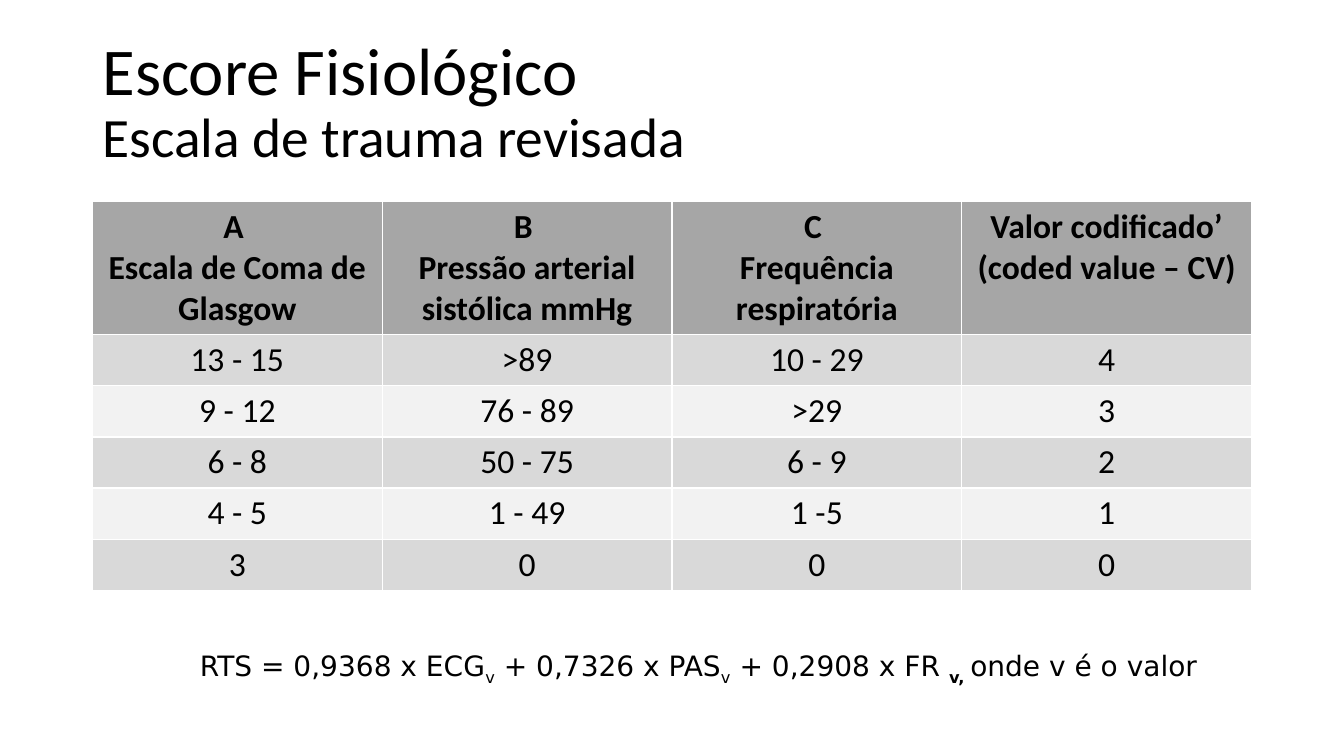
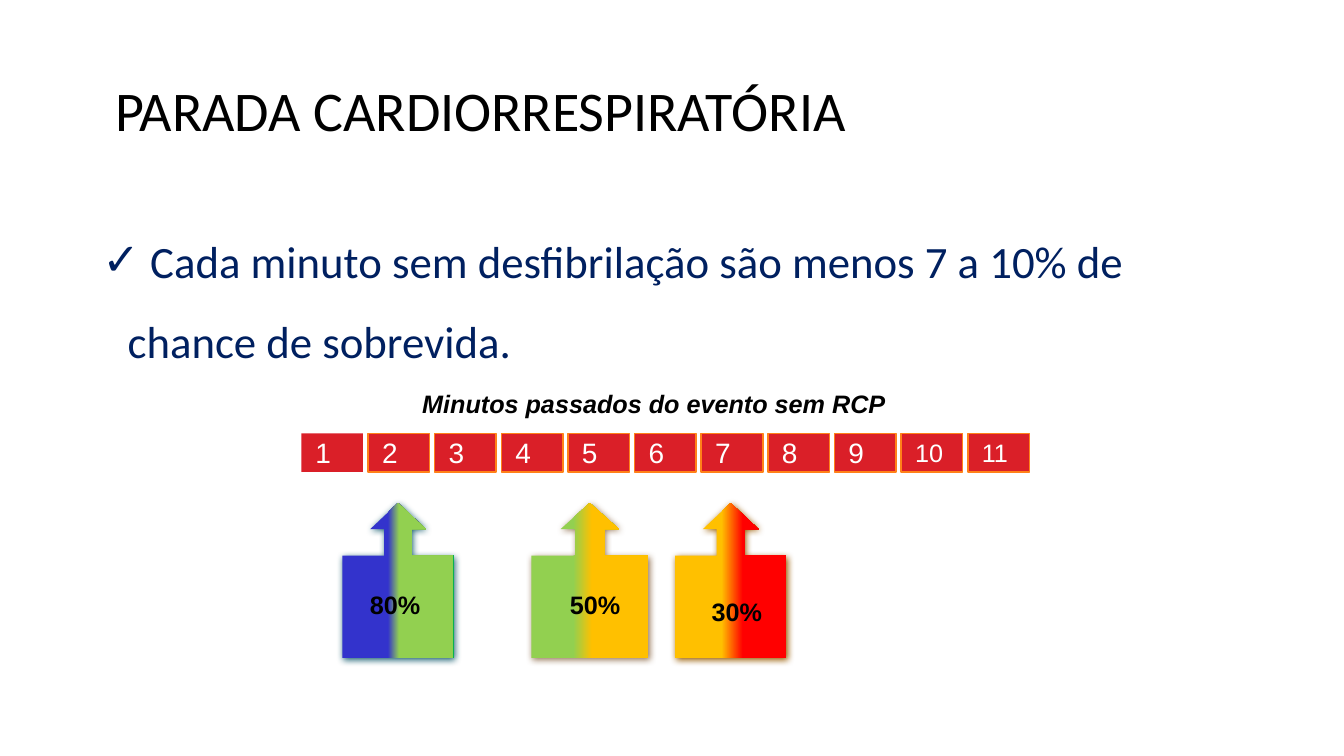
from lxml import etree
from pptx import Presentation
from pptx.dml.color import RGBColor
from pptx.enum.shapes import MSO_SHAPE
from pptx.enum.text import MSO_ANCHOR, MSO_AUTO_SIZE, PP_ALIGN
from pptx.oxml.ns import qn
from pptx.util import Pt

LEFT, CENTER = PP_ALIGN.LEFT, PP_ALIGN.CENTER
MIDDLE, TOP = MSO_ANCHOR.MIDDLE, MSO_ANCHOR.TOP
NO_FIT = MSO_AUTO_SIZE.NONE
RECT, CALLOUT = MSO_SHAPE.RECTANGLE, MSO_SHAPE.UP_ARROW_CALLOUT
TITLE_ONLY, TITLE_AND_CONTENT = 5, 1

BLACK, WHITE, NAVY = "000000", "FFFFFF", "002060"
HEADER, ODD, EVEN = "A6A6A6", "D9D9D9", "F2F2F2"
RED, ORANGE = "DA1F28", "FF8119"
CONTENT_X, CONTENT_Y, CONTENT_W = 66, 144, 828

rgb = RGBColor.from_string


def write(p, text, size, color=BLACK, font="Calibri", bold=False, italic=False, sub=False):
    r = p.add_run()
    r.text = text
    f = r.font
    f.size, f.name, f.bold, f.italic = Pt(size), font, bold, italic
    f.color.rgb = rgb(color)
    if sub:
        r._r.get_or_add_rPr().set("baseline", "-25000")


def add_text_box(s, x, y, w, h, inset=(10, 6), align=LEFT, anchor=TOP):
    """Add an empty text box and return its first paragraph."""
    tf = s.shapes.add_textbox(Pt(x), Pt(y), Pt(w), Pt(h)).text_frame
    tf.word_wrap = True
    tf.vertical_anchor = anchor
    tf.margin_left = tf.margin_right = Pt(inset[0])
    tf.margin_top = tf.margin_bottom = Pt(inset[1])
    p = tf.paragraphs[0]
    p.alignment = align
    return p


prs = Presentation()
prs.slide_width, prs.slide_height = Pt(960), Pt(540)

# Slides and titles: layout, (text, size) lines, top and bottom inset
titles = [
    (TITLE_ONLY, [("Escore Fisiológico", 47.7), ("Escala de trauma revisada", 39.6)], 0, 14),
    (TITLE_AND_CONTENT, [(" PARADA CARDIORRESPIRATÓRIA", 40)], 3.6, 3.6),
]
for layout, lines, inset_top, inset_bottom in titles:
    s = prs.slides.add_slide(prs.slide_layouts[layout])
    title = s.shapes.title
    title.left, title.top, title.width, title.height = Pt(CONTENT_X), Pt(29), Pt(CONTENT_W), Pt(104)
    tf = title.text_frame
    tf.auto_size, tf.vertical_anchor = NO_FIT, MIDDLE
    tf.margin_top, tf.margin_bottom = Pt(inset_top), Pt(inset_bottom)
    p = tf.paragraphs[0]
    p.alignment, p.line_spacing = LEFT, 0.9
    for i, (text, size) in enumerate(lines):
        if i:
            p.add_line_break()
        write(p, text, size)
score_slide, arrest_slide = prs.slides

# Revised trauma score table
rows = [
    ["A \nEscala de Coma de Glasgow", "B \nPressão arterial sistólica mmHg",
     "C \nFrequência respiratória", "Valor codificado’\n(coded value – CV)"],
    ["13 - 15", ">89", "10 - 29", "4"],
    ["9 - 12", "76 - 89", ">29", "3"],
    ["6 - 8", "50 - 75", "6 - 9", "2"],
    ["4 - 5", "1 - 49", "1 -5", "1"],
    ["3", "0", "0", "0"],
]
table = score_slide.shapes.add_table(len(rows), len(rows[0]), Pt(CONTENT_X), Pt(CONTENT_Y),
                                     Pt(CONTENT_W), Pt(276.5)).table
for i, row in enumerate(rows):
    table.rows[i].height = Pt(36.4 if i else 94.5)
    for j, text in enumerate(row):
        cell = table.cell(i, j)
        cell.fill.solid()
        cell.fill.fore_color.rgb = rgb(HEADER if i == 0 else ODD if i % 2 else EVEN)
        tf = cell.text_frame
        for k, line in enumerate(text.split("\n")):
            p = tf.add_paragraph() if k else tf.paragraphs[0]
            p.alignment = CENTER
            write(p, line, 24, bold=i == 0)

# Score formula
p = add_text_box(score_slide, 85, 459.4, CONTENT_W, 31.6, inset=(7.2, 3.6), align=CENTER)
formula = [("RTS = 0,9368 x ECG", {}), ("v", {"sub": True}), (" + 0,7326 x PAS", {}),
           ("v", {"sub": True}), (" + 0,2908 x FR ", {}), ("v, ", {"sub": True, "bold": True}),
           ("onde v é o valor", {})]
for text, fmt in formula:
    write(p, text, 20, font="DejaVu Sans", **fmt)

# Survival statement
s = arrest_slide
body = s.placeholders[1]
body.left, body.top, body.width, body.height = Pt(CONTENT_X), Pt(CONTENT_Y), Pt(CONTENT_W), Pt(343)
tf = body.text_frame
tf.auto_size = NO_FIT
p = tf.paragraphs[0]
pPr = p._p.get_or_add_pPr()
pPr.set("marL", str(Pt(18)))
pPr.set("indent", str(-Pt(18)))
etree.SubElement(pPr, qn("a:buChar")).set("char", "✓")
p.line_spacing, p.space_before = 1.5, Pt(0)
write(p, " Cada minuto sem desfibrilação são menos 7 a 10% de chance de sobrevida.", 32, NAVY)

# Survival callouts: left, width, gradient stops, shadow, label, label box
callouts = [
    (244.6, 79.4, [(0, "3333CC"), (41, "3333CC"), (51, "92D050"), (99, "92D050"), (100, "00B050")],
     "1B6173", "80%", (227.5, 394, 109.4)),
    (379.6, 83.4, [(0, "92D050"), (36, "92D050"), (52, "FFC000"), (100, "FFC000")],
     "997A5C", "50%", (375, 394, 100)),
    (482.2, 79.4, [(0, "FFC000"), (42, "FFC000"), (61, "FF0000"), (100, "FF0000")],
     "995C00", "30%", (468.7, 399.6, 115.2)),
]
for x, w, stops, shadow, label, (label_x, label_y, label_w) in callouts:
    sp = s.shapes.add_shape(CALLOUT, Pt(x), Pt(359.3), Pt(w), Pt(110.9))
    for i, value in enumerate([0.25, 0.25, 18.7 / w, 0.66]):
        sp.adjustments[i] = value
    sp.line.fill.background()
    sp.fill.gradient()
    sp.fill.gradient_angle = 0
    spPr = sp._element.spPr
    gsLst = spPr.find(qn("a:gradFill")).find(qn("a:gsLst"))
    for gs in list(gsLst):
        gsLst.remove(gs)
    for pos, color in stops:
        gs = etree.SubElement(gsLst, qn("a:gs"), pos=str(pos * 1000))
        etree.SubElement(gs, qn("a:srgbClr"), val=color)
    sp.shadow.inherit = False
    outer = etree.SubElement(spPr.find(qn("a:effectLst")), qn("a:outerShdw"), blurRad=str(Pt(5)),
                             dist=str(Pt(1.4)), dir="2700000", rotWithShape="0")
    etree.SubElement(outer, qn("a:srgbClr"), val=shadow)
    p = add_text_box(s, label_x, label_y, label_w, 75, align=CENTER, anchor=MIDDLE)
    write(p, label, 18, font="Arial", bold=True)

# Minute scale
for i in range(11):
    sp = s.shapes.add_shape(RECT, Pt(215.3 + 47.6 * i), Pt(309.6), Pt(44), Pt(27.4))
    sp.shadow.inherit = False
    sp.fill.solid()
    sp.fill.fore_color.rgb = rgb(RED)
    if i:
        sp.line.color.rgb = rgb(ORANGE)
        sp.line.width = Pt(1.05)
    else:
        sp.line.fill.background()
    tf = sp.text_frame
    tf.vertical_anchor = MIDDLE
    tf.margin_left = Pt(10)
    tf.margin_right = tf.margin_top = tf.margin_bottom = 0
    p = tf.paragraphs[0]
    p.alignment = LEFT
    write(p, str(i + 1), 20 if i < 9 else 18, WHITE, "Arial")

p = add_text_box(s, 291.6, 271.4, 374.4, 30.2)
write(p, "Minutos passados do evento sem RCP", 18, font="Arial", bold=True, italic=True)

prs.save("out.pptx")
